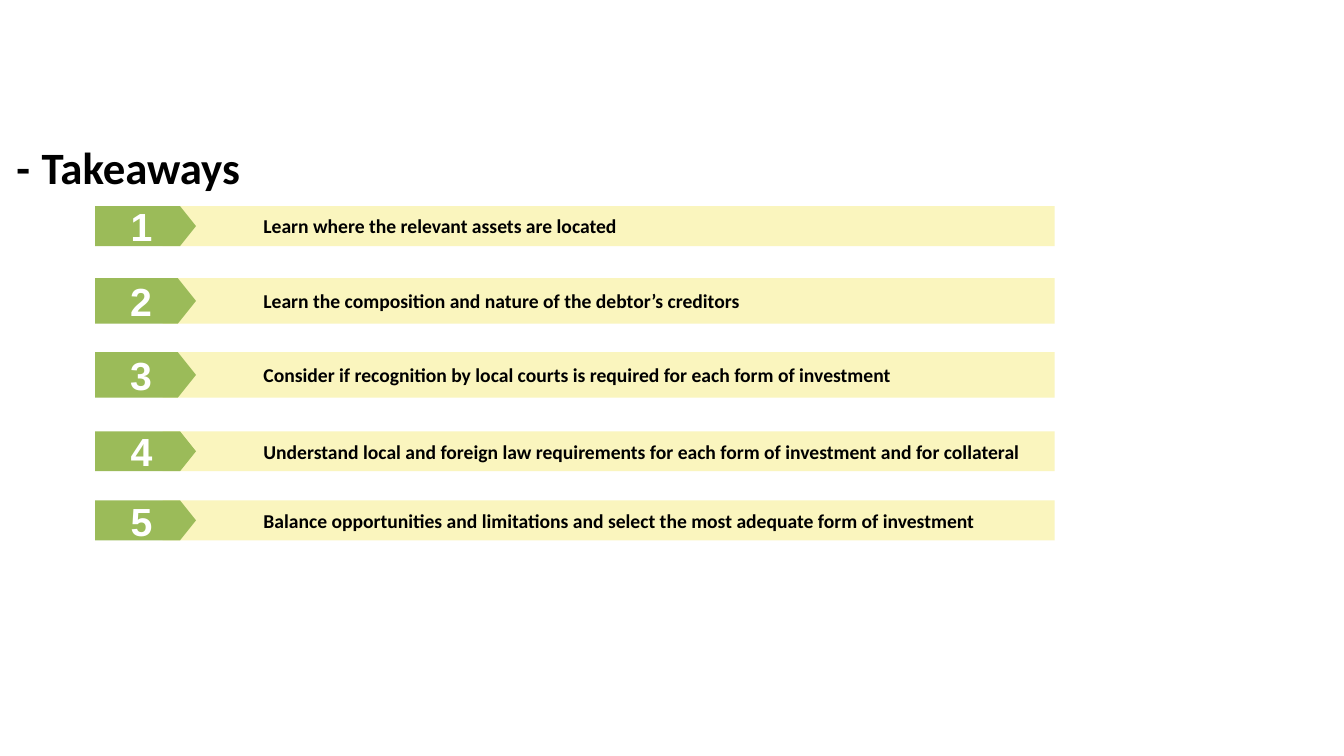
"""Build the Takeaways slide: a heading over five numbered bars."""
from lxml import etree
from pptx import Presentation
from pptx.dml.color import RGBColor
from pptx.enum.shapes import MSO_SHAPE
from pptx.enum.text import MSO_ANCHOR, PP_ALIGN
from pptx.oxml.ns import qn
from pptx.util import Cm, Pt

RECTANGLE, PENTAGON = MSO_SHAPE.RECTANGLE, MSO_SHAPE.PENTAGON
MIDDLE = MSO_ANCHOR.MIDDLE
LEFT, CENTER = PP_ALIGN.LEFT, PP_ALIGN.CENTER

BLACK = RGBColor(0x00, 0x00, 0x00)
WHITE = RGBColor(0xFF, 0xFF, 0xFF)
CREAM = RGBColor(0xFA, 0xF5, 0xBE)
GREEN = RGBColor(0x9B, 0xBB, 0x59)

HEADING = "- \tTakeaways"
LOW, TALL = 2.01, 2.29
TAKEAWAYS = [
    ("Learn where the relevant assets are located", 10.39, LOW),
    ("Learn the composition and nature of the debtor’s creditors", 14.02, TALL),
    ("Consider if recognition by local courts is required for each form of investment", 17.75, TALL),
    ("Understand local and foreign law requirements for each form of investment and for collateral", 21.74, LOW),
    ("Balance opportunities and limitations and select the most adequate form of investment", 25.22, LOW),
]
BADGE_LEFT, BADGE_WIDTH = 4.8, 5.08
BAR_LEFT, BAR_WIDTH = 8.2, 44.96
STEP = 2.54


def indent_first_line(paragraph, indent):
    properties = paragraph._p.get_or_add_pPr()
    properties.set("marL", "0")
    properties.set("indent", str(Cm(indent)))
    return properties


def write(paragraph, text, font_name, size, color):
    run = paragraph.add_run()
    run.text = text
    run.font.name, run.font.size, run.font.bold = font_name, Pt(size), True
    run.font.color.rgb = color


def add_block(group, geometry, left, top, width, height, fill, align):
    block = group.shapes.add_shape(geometry, Cm(left), Cm(top), Cm(width), Cm(height))
    block.shadow.inherit = False
    block.fill.solid()
    block.fill.fore_color.rgb = fill
    block.line.fill.background()
    block.text_frame.vertical_anchor = MIDDLE
    block.text_frame.word_wrap = True
    block.text_frame.paragraphs[0].alignment = align
    return block


def add_heading(slide):
    frame = slide.shapes.add_textbox(Cm(-0.69), Cm(6.78), Cm(54.28), Cm(20.12)).text_frame
    frame.word_wrap = True
    frame.margin_left = frame.margin_right = Cm(0.25)
    frame.margin_top = frame.margin_bottom = Cm(0.25)
    paragraph = frame.paragraphs[0]
    properties = indent_first_line(paragraph, STEP / 2)
    tabs = etree.SubElement(properties, qn("a:tabLst"))
    etree.SubElement(tabs, qn("a:tab"), pos=str(Cm(2 * STEP)), algn="l")
    write(paragraph, HEADING, "Calibri", 64, BLACK)


def add_takeaway(slide, number, text, top, height):
    group = slide.shapes.add_group_shape()

    bar = add_block(group, RECTANGLE, BAR_LEFT, top, BAR_WIDTH, height, CREAM, LEFT)
    frame = bar.text_frame
    frame.margin_left, frame.margin_right = Cm(STEP), Cm(0.25)
    frame.margin_top = frame.margin_bottom = 0
    sentence = frame.paragraphs[0]
    indent_first_line(sentence, STEP)
    sentence.space_after = Pt(6)
    write(sentence, text, "Calibri", 28, BLACK)

    badge = add_block(group, PENTAGON, BADGE_LEFT, top, BADGE_WIDTH, height, GREEN, CENTER)
    badge.adjustments[0] = 0.4
    write(badge.text_frame.paragraphs[0], str(number), "Arial", 56, WHITE)


def main():
    deck = Presentation()
    deck.slide_width, deck.slide_height = Cm(67.74), Cm(38.1)
    slide = deck.slides.add_slide(deck.slide_layouts[6])
    add_heading(slide)
    for number, (text, top, height) in enumerate(TAKEAWAYS, start=1):
        add_takeaway(slide, number, text, top, height)
    deck.save("out.pptx")


if __name__ == "__main__":
    main()
